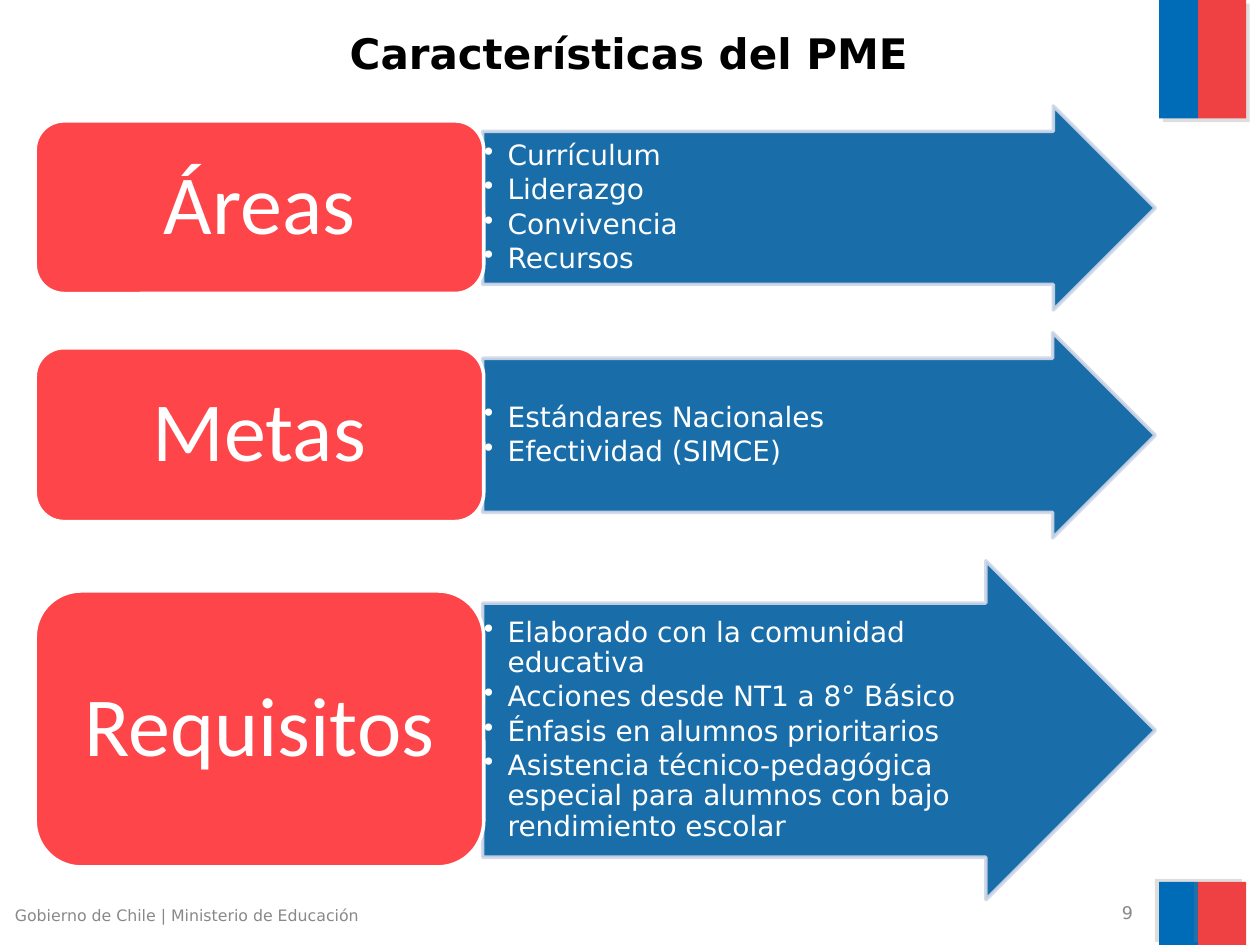
from lxml import etree
from pptx import Presentation
from pptx import util as u
from pptx.dml.color import RGBColor
from pptx.enum import shapes, text
from pptx.oxml.ns import qn

PX = 9144  # 100 px to the inch
COLORS = {
    "blue": "006CB7", "red": "EF4144", "arrow": "005FA1", "edge": "D0D8E8",
    "label": "FE454A", "white": "FFFFFF", "black": "000000",
    "gray": "898989", "shade": "808080",
}
SANS, BODY = "DejaVu Sans", "Calibri"
ROWS = [
    ("Áreas", 84, 162, 96, 137,
     ["Currículum", "Liderazgo", "Convivencia", "Recursos"]),
    ("Metas", 264, 163, 276, 138,
     ["Estándares Nacionales", "Efectividad (SIMCE)"]),
    ("Requisitos", 445, 269, 469, 219,
     ["Elaborado con la comunidad educativa",
      "Acciones desde NT1 a 8° Básico",
      "Énfasis en alumnos prioritarios",
      "Asistencia técnico-pedagógica especial para alumnos con bajo "
      "rendimiento escolar"]),
]


def rgb(name):
    return RGBColor.from_string(COLORS[name])


def px(*nums):
    return [u.Emu(n * PX) for n in nums]


def add(parent, tag, **attrs):
    return etree.SubElement(parent, qn(tag), attrs)


def style(par, font, size, color, align, bold=False):
    par.alignment = align
    for run in par.runs:
        run.font.name, run.font.size = font, u.Pt(size)
        run.font.bold = bold
        run.font.color.rgb = rgb(color)


def inset(frame, side, top):
    frame.word_wrap = True
    frame.vertical_anchor = text.MSO_ANCHOR.MIDDLE
    frame.margin_left = frame.margin_right = px(side)[0]
    frame.margin_top = frame.margin_bottom = px(top)[0]


def shape(slide, kind, box, fill, edge=None):
    item = slide.shapes.add_shape(kind, *px(*box))
    item.shadow.inherit = False
    item.fill.solid()
    item.fill.fore_color.rgb = rgb(fill)
    if edge:
        item.line.color.rgb = rgb(edge)
        item.line.width = u.Pt(2)
    else:
        item.line.fill.background()
    return item


def fade(item):
    """Make fill and line 90% opaque."""
    for color in item._element.spPr.iter(qn("a:srgbClr")):
        add(color, "a:alpha", val="90000")


def shade(item, angle):
    effects = item._element.spPr.find(qn("a:effectLst"))
    outer = add(effects, "a:outerShdw", blurRad="0", dist="38100",
                dir=str(angle * 60000), algn="ctr", rotWithShape="0")
    color = add(outer, "a:srgbClr", val=COLORS["shade"])
    add(color, "a:alpha", val="25000")


def flag(slide, top, high, angle):
    """Blue and red band at the right edge."""
    for left, wide, color in ((920, 31, "blue"), (951, 38, "red")):
        box = left, top, wide, high
        shade(shape(slide, shapes.MSO_SHAPE.RECTANGLE, box, color), angle)


def bullet(par):
    par.line_spacing, par.space_after = 0.9, u.Pt(2.4)
    props = par._p.get_or_add_pPr()
    props.set("marL", str(19 * PX))
    props.set("indent", str(-19 * PX))
    add(props, "a:buChar", char="•")


def points(slide, box, items):
    arrow = shape(slide, shapes.MSO_SHAPE.RIGHT_ARROW, box, "arrow", "edge")
    arrow.adjustments[0], arrow.adjustments[1] = 0.75, 0.5
    fade(arrow)
    frame = arrow.text_frame
    inset(frame, 1, 1)
    frame.text = "\n".join(items)
    for par in frame.paragraphs:
        style(par, SANS, 16, "white", text.PP_ALIGN.LEFT)
        bullet(par)


def label(slide, box, words):
    card = shape(slide, shapes.MSO_SHAPE.ROUNDED_RECTANGLE, box,
                 "label", "white")
    inset(card.text_frame, 20, 10)
    card.text_frame.text = words
    par = card.text_frame.paragraphs[0]
    par.line_spacing = 0.9
    style(par, BODY, 48, "white", text.PP_ALIGN.CENTER)


def title(slide, box, words):
    head = slide.shapes.title
    head.left, head.top, head.width, head.height = px(*box)
    inset(head.text_frame, 10, 5)
    head.text_frame.text = words
    style(head.text_frame.paragraphs[0], SANS, 24, "black",
          text.PP_ALIGN.CENTER, True)


def note(slide, box, words, size, align, anchor):
    frame = slide.shapes.add_textbox(*px(*box)).text_frame
    inset(frame, 10, 5)
    frame.vertical_anchor = anchor
    frame.text = words
    style(frame.paragraphs[0], SANS, size, "gray", align)


def main():
    deck = Presentation()
    deck.slide_width, deck.slide_height = px(1000, 750)
    slide = deck.slides.add_slide(deck.slide_layouts[5])
    flag(slide, 0, 94, 45)
    flag(slide, 700, 50, 215)
    note(slide, (676, 714, 233, 21), "9", 10,
         text.PP_ALIGN.RIGHT, text.MSO_ANCHOR.MIDDLE)
    note(slide, (2, 714, 317, 27),
         "Gobierno de Chile | Ministerio de Educación", 9,
         text.PP_ALIGN.LEFT, text.MSO_ANCHOR.TOP)
    title(slide, (0, 0, 998, 84), "Características del PME")
    for words, top, high, card_top, card_high, items in ROWS:
        points(slide, (383, top, 534, high), items)
        label(slide, (28, card_top, 356, card_high), words)
    deck.save("out.pptx")


if __name__ == "__main__":
    main()
